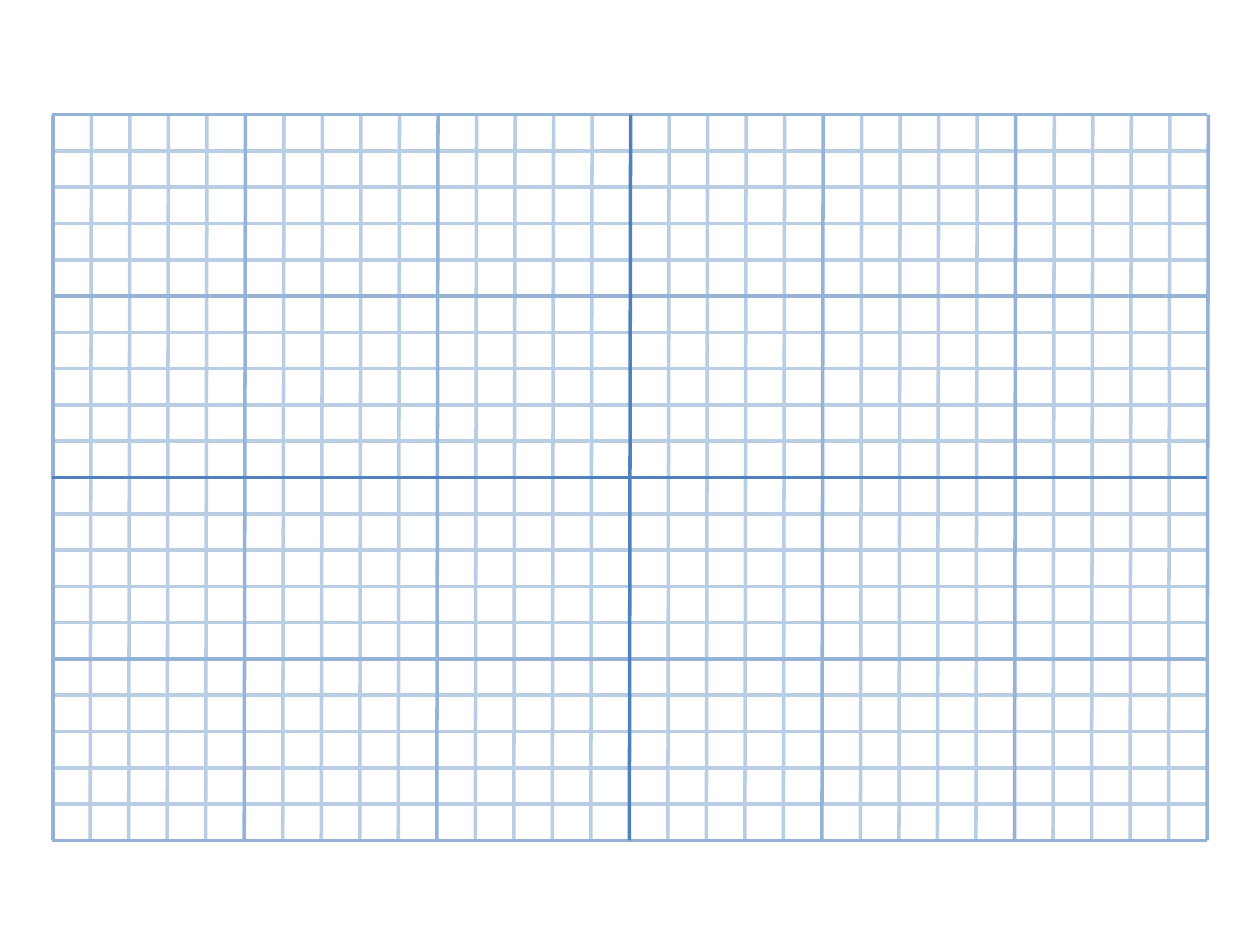
from dataclasses import dataclass

from lxml.etree import SubElement
from pptx import Presentation
from pptx.dml.color import RGBColor
from pptx.enum.shapes import MSO_CONNECTOR as Connector
from pptx.oxml.ns import qn
from pptx.slide import Slide
from pptx.util import Inches, Pt

COLUMNS, ROWS = 30, 20
MAJOR_EVERY = 5
LEFT, RIGHT = 0.42, 9.59
TOP, BOTTOM = 0.91, 6.67
SHIFT = 0.01  # columns lean left by this much, rows start and end this much earlier


def color(hex_string):
    return RGBColor.from_string(hex_string)


@dataclass
class GraphPaper:
    slide: Slide
    minor: str = "B9CDE5"
    major: str = "95B3D7"
    axis: str = "4F81BD"
    line_width: float = 2

    def line(self, start, end, line_color):
        points = [Inches(value) for value in (*start, *end)]
        connector = self.slide.shapes.add_connector(Connector.STRAIGHT, *points)
        connector.line.color.rgb = color(line_color)
        connector.line.width = Pt(self.line_width)
        SubElement(connector._element.spPr, qn("a:effectLst"))

    def column(self, index, line_color):
        x = LEFT + index * (RIGHT - LEFT) / COLUMNS
        lean = SHIFT if index else 0
        self.line((x, TOP), (x - lean, BOTTOM), line_color)

    def row(self, index, line_color):
        y = TOP + index * (BOTTOM - TOP) / ROWS
        self.line((LEFT - SHIFT, y), (RIGHT - SHIFT, y), line_color)

    def line_color(self, index, count):
        if index == count // 2:
            return self.axis
        return self.minor if index % MAJOR_EVERY else self.major

    def grid(self):
        """Draw the lines from light to dark, so that the axes lie on top."""
        for layer in (self.minor, self.major, self.axis):
            for draw, count in ((self.column, COLUMNS), (self.row, ROWS)):
                for index in range(count + 1):
                    if self.line_color(index, count) == layer:
                        draw(index, layer)


def main():
    presentation = Presentation()
    presentation.slide_width = Inches(10)
    presentation.slide_height = Inches(7.5)
    slide = presentation.slides.add_slide(presentation.slide_layouts[6])
    GraphPaper(slide).grid()
    presentation.save("out.pptx")


if __name__ == "__main__":
    main()
